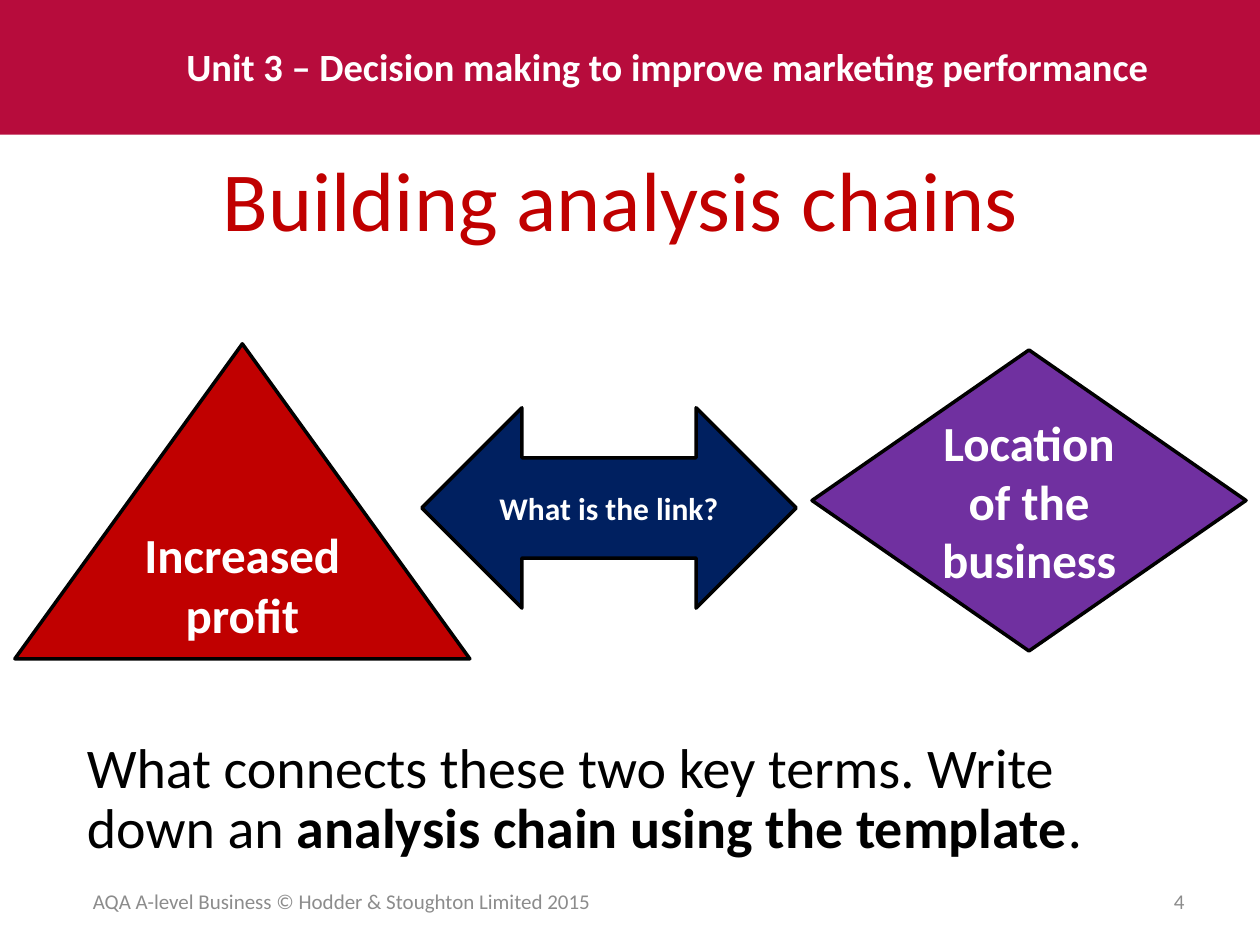
from dataclasses import dataclass

from pptx import Presentation
from pptx.dml.color import RGBColor
from pptx.enum.shapes import MSO_SHAPE
from pptx.enum.text import MSO_ANCHOR, MSO_AUTO_SIZE, PP_ALIGN
from pptx.util import Pt


@dataclass(frozen=True)
class Theme:
    font: str = "Calibri"
    banner: str = "B70C3C"
    red: str = "C00000"
    navy: str = "002060"
    purple: str = "7030A0"
    black: str = "000000"
    white: str = "FFFFFF"
    grey: str = "8C8C8C"
    title_size: int = 48
    body_size: int = 32
    term_size: int = 28
    header_size: int = 22
    link_size: int = 18
    footer_size: int = 12


THEME = Theme()


def color(value):
    return RGBColor.from_string(value)


def write_text(shape, runs, text_color, align=PP_ALIGN.LEFT,
               anchor=MSO_ANCHOR.MIDDLE, line_spacing=None):
    """Fill a shape with one paragraph of (text, size, bold) runs."""
    frame = shape.text_frame
    frame.word_wrap = True
    frame.auto_size = MSO_AUTO_SIZE.NONE
    frame.vertical_anchor = anchor
    paragraph = frame.paragraphs[0]
    paragraph.alignment = align
    if line_spacing:
        paragraph.line_spacing = line_spacing
    for text, size, bold in runs:
        run = paragraph.add_run()
        run.text = text
        run.font.name = THEME.font
        run.font.size = Pt(size)
        run.font.bold = bold
        run.font.color.rgb = color(text_color)


def add_filled_shape(slide, kind, box, fill, outlined=True):
    shape = slide.shapes.add_shape(kind, *map(Pt, box))
    shape.shadow.inherit = False
    shape.fill.solid()
    shape.fill.fore_color.rgb = color(fill)
    if outlined:
        shape.line.color.rgb = color(THEME.black)
        shape.line.width = Pt(2)
    else:
        shape.line.fill.background()
    return shape


def add_term(slide, kind, box, fill, runs):
    shape = add_filled_shape(slide, kind, box, fill)
    write_text(shape, runs, THEME.white, PP_ALIGN.CENTER)


def add_label(slide, box, runs, text_color, **options):
    text_box = slide.shapes.add_textbox(*map(Pt, box))
    write_text(text_box, runs, text_color, **options)


def set_title(slide, box, text):
    title = slide.shapes.title
    title.left, title.top, title.width, title.height = map(Pt, box)
    write_text(title, [(text, THEME.title_size, False)], THEME.red,
               PP_ALIGN.CENTER, line_spacing=0.9)


def main():
    presentation = Presentation()
    presentation.slide_width = Pt(720)
    presentation.slide_height = Pt(540)
    slide = presentation.slides.add_slide(presentation.slide_layouts[5])

    # Unit banner
    add_filled_shape(slide, MSO_SHAPE.RECTANGLE, (0, 0, 720, 77),
                     THEME.banner, outlined=False)
    add_label(slide, (99.4, 21, 578, 34),
              [("Unit 3 – Decision making to improve marketing performance",
                THEME.header_size, True)],
              THEME.white, anchor=MSO_ANCHOR.TOP)

    # Title
    set_title(slide, (0, 77, 720, 80), "Building analysis chains ")

    # Two key terms and the link between them
    add_term(slide, MSO_SHAPE.LEFT_RIGHT_ARROW, (241, 233, 214, 114.5),
             THEME.navy, [("What is the link?", THEME.link_size, True)])
    add_term(slide, MSO_SHAPE.ISOSCELES_TRIANGLE, (8.5, 196.5, 260, 180),
             THEME.red, [("Increased", THEME.term_size, True),
                         (" ", THEME.body_size, True),
                         ("profit", THEME.term_size, True)])
    add_term(slide, MSO_SHAPE.FLOWCHART_DECISION, (464, 200, 248, 172),
             THEME.purple,
             [("Location of the business", THEME.term_size, True)])

    # Task
    add_label(slide, (42.5, 412, 641, 91),
              [("What connects these two key terms. Write down an ",
                THEME.body_size, False),
               ("analysis chain using the template", THEME.body_size, True),
               (".", THEME.body_size, False)],
              THEME.black, line_spacing=0.9)

    # Footer and slide number
    add_label(slide, (36.5, 500.5, 317.5, 29),
              [("AQA A-level Business © Hodder & Stoughton Limited 2015",
                THEME.footer_size, False)],
              THEME.grey, align=PP_ALIGN.CENTER)
    add_label(slide, (516, 500.5, 168, 29),
              [("4", THEME.footer_size, False)],
              THEME.grey, align=PP_ALIGN.RIGHT)

    presentation.save("out.pptx")


if __name__ == "__main__":
    main()
